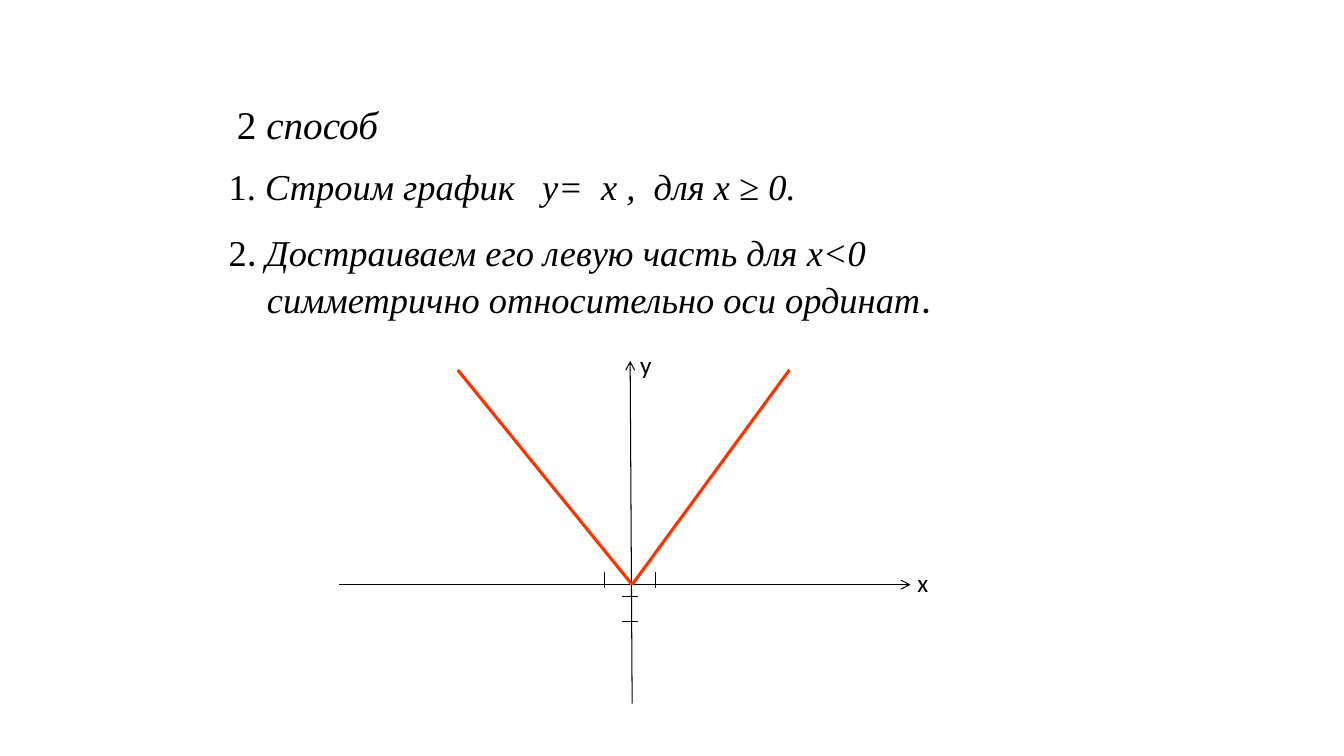
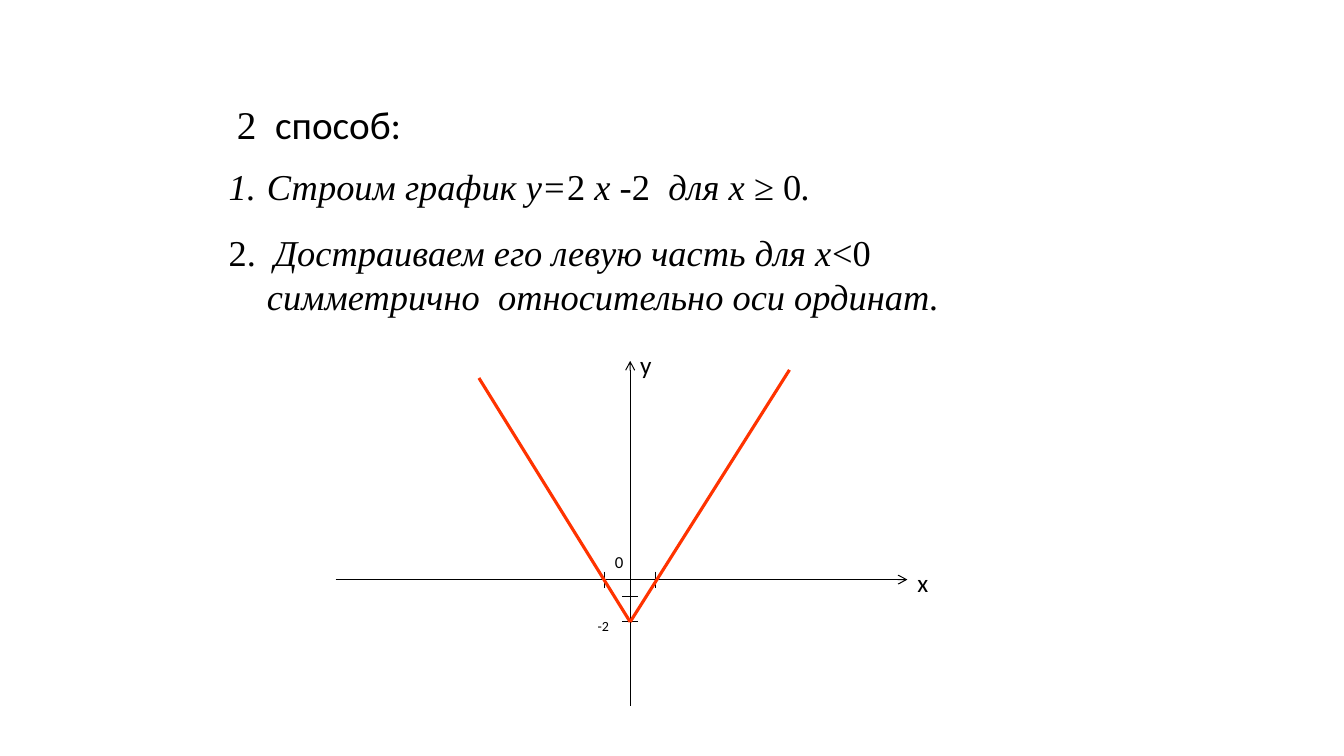
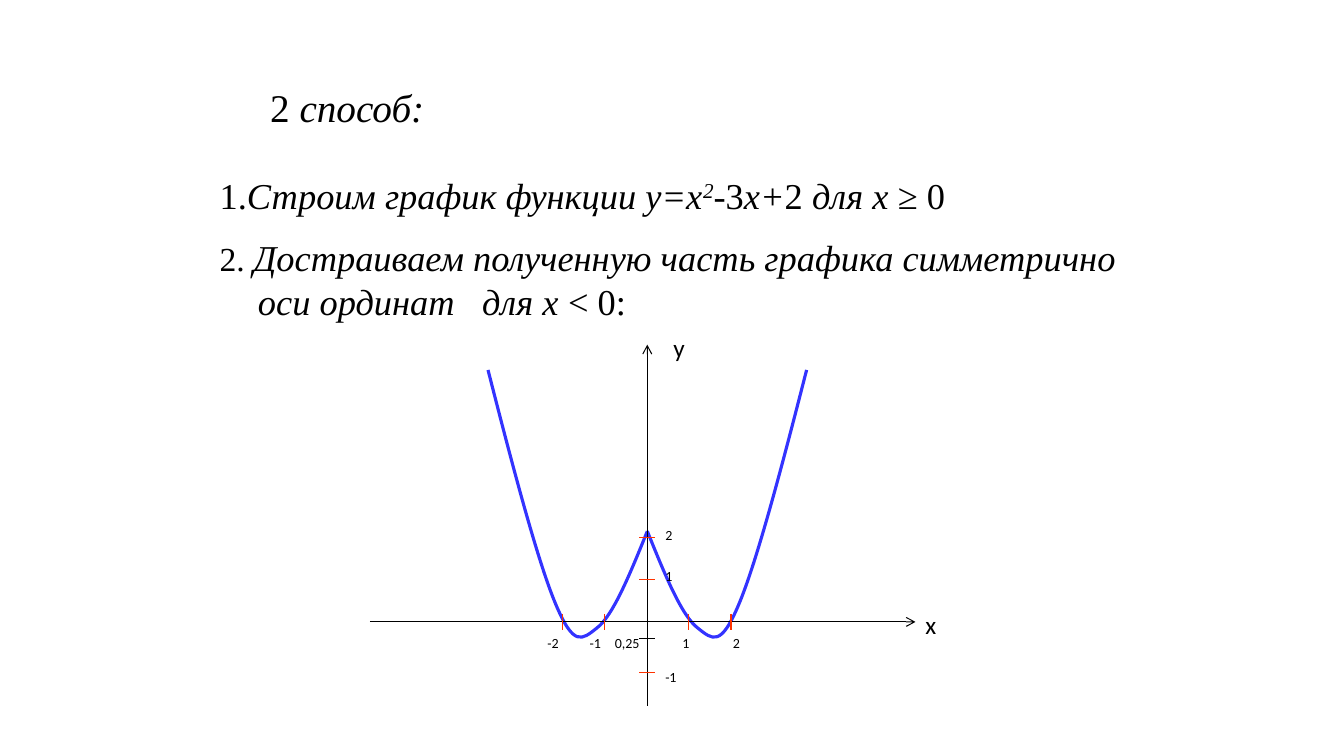
from lxml import etree
from pptx import Presentation
from pptx.dml.color import RGBColor
from pptx.enum.shapes import MSO_CONNECTOR
from pptx.enum.text import MSO_ANCHOR, MSO_AUTO_SIZE, PP_ALIGN
from pptx.oxml.ns import qn
from pptx.util import Inches, Pt

STRAIGHT = MSO_CONNECTOR.STRAIGHT
TOP = MSO_ANCHOR.TOP
LEFT = PP_ALIGN.LEFT
FIXED = MSO_AUTO_SIZE.NONE
GROW = MSO_AUTO_SIZE.SHAPE_TO_FIT_TEXT
TITLE_ONLY = 5

BLACK, RED, BLUE = "000000", "FF3300", "3333FF"
SERIF, SANS = "Times New Roman", "Calibri"
TITLE_SIZE, BODY_SIZE, AXIS_SIZE = 28, 26, 18
TITLE_BOX = (2.33, 0.58)
LABEL_HEIGHTS = {10: 0.27, 12: 0.3, AXIS_SIZE: 0.4}
HALF_TICK = 0.08
HANG = 0.38

PLAIN = {}
ITALIC = {"italic": True}
SUPER = {"italic": True, "raised": True}
SANS_TITLE = {"size": TITLE_SIZE, "font": SANS}
SMALLER = {"size": 24}

SLIDES = [
    {
        "title": [("2 ", PLAIN), ("способ", ITALIC)],
        "title_at": (2.25, 1),
        "body_box": (2.17, 1.58, 8.5, 1.74),
        "body": [
            [("1. ", PLAIN), ("Строим график   у=  х ,  для х ≥ 0.", ITALIC)],
            [("2", PLAIN), (". ", SANS_TITLE),
             ("Достраиваем его левую часть для х<0 симметрично относительно оси ординат", ITALIC),
             (".", SANS_TITLE)],
        ],
        "axes": [((6.27, 6.98), (6.25, 3.58)), ((3.36, 5.8), (9.03, 5.8))],
        "origin": (6.25, 5.75),
        "x_ticks": [(-0.25, BLACK), (0.25, BLACK)],
        "y_ticks": [(0.17, BLACK), (0.42, BLACK)],
        "vertex": (6.27, 5.8),
        "arm_ends": [(7.83, 3.67), (4.54, 3.67)],
        "labels": [("х", 9, 5.58, 0.33, AXIS_SIZE), ("у", 6.25, 3.42, 0.33, AXIS_SIZE)],
    },
    {
        "title": [("2 ", PLAIN), (" способ:", SANS_TITLE)],
        "title_at": (2.25, 1),
        "body_box": (2.17, 1.58, 8.5, 1.74),
        "numbered": 1,
        "body": [
            [("Строим график у=", ITALIC), ("2 ", PLAIN), ("х -", ITALIC), ("2 ", PLAIN),
             (" для х ", ITALIC), ("≥ 0", PLAIN), (".", ITALIC)],
            [("2. ", PLAIN), (" ", SANS_TITLE), ("Достраиваем его левую часть для х", ITALIC),
             ("<0", PLAIN), (" симметрично  относительно оси ординат.", ITALIC)],
        ],
        "axes": [((6.25, 7), (6.25, 3.58)), ((3.33, 5.75), (9, 5.75))],
        "origin": (6.25, 5.75),
        "x_ticks": [(-0.25, BLACK), (0.25, BLACK)],
        "y_ticks": [(0.17, BLACK), (0.42, BLACK)],
        "vertex": (6.25, 6.17),
        "arm_ends": [(7.83, 3.67), (4.75, 3.75)],
        "labels": [("-2", 5.83, 6.08, 0.42, 10), ("х", 9, 5.58, 0.33, AXIS_SIZE),
                   ("у", 6.25, 3.42, 0.33, AXIS_SIZE), ("0", 6, 5.42, 0.25, 12)],
    },
    {
        "title": [("2 ", PLAIN), ("способ:", ITALIC)],
        "title_at": (2.58, 0.83),
        "body_box": (2.08, 1.67, 9.25, 1.63),
        "body": [
            [("1.", PLAIN), ("Строим график функции у=х", ITALIC), ("2", SUPER), ("-", ITALIC),
             ("3", PLAIN), ("х+", ITALIC), ("2", PLAIN), (" для х ", ITALIC), ("≥ 0", PLAIN)],
            [("2. ", SMALLER),
             ("Достраиваем полученную часть графика симметрично оси ординат   для х ", ITALIC),
             ("< 0:", PLAIN)],
        ],
        "axes": [((6.42, 7), (6.42, 3.42)), ((3.67, 6.17), (9.08, 6.17))],
        "origin": (6.42, 6.17),
        "x_ticks": [(offset, RED) for offset in (-0.84, -0.42, 0.41, 0.83)],
        "y_ticks": [(0.16, BLACK), (0.5, RED), (-0.84, RED), (-0.42, RED)],
        "vertex": (6.42, 5.27),
        "curve": [
            [(0.17, 0.42), (0.34, 0.84), (0.5, 0.96)],
            [(0.65, 1.08), (0.73, 1.15), (0.91, 0.72)],
            [(1.09, 0.29), (1.34, -0.66), (1.58, -1.6)],
        ],
        "labels": [
            ("0,25", 6, 6.25, 0.58, 10), ("-2", 5.33, 6.25, 0.33, 10),
            ("-1", 5.75, 6.25, 0.33, 10), ("-1", 6.5, 6.58, 0.33, 10),
            ("2", 7.17, 6.25, 0.33, 10), ("1", 6.67, 6.25, 0.33, 10),
            ("2", 6.5, 5.17, 0.33, 10), ("1", 6.5, 5.58, 0.33, 10),
            ("х", 9.08, 6, 0.42, AXIS_SIZE), ("у", 6.58, 3.25, 0.42, AXIS_SIZE),
        ],
    },
]


def color(value):
    return RGBColor.from_string(value)


def add_runs(paragraph, runs, size, font=SERIF):
    paragraph.alignment = LEFT
    for text, style in runs:
        run = paragraph.add_run()
        run.text = text
        run.font.size = Pt(style.get("size", size))
        run.font.name = style.get("font", font)
        run.font.italic = style.get("italic", False)
        run.font.color.rgb = color(BLACK)
        if style.get("raised"):
            run._r.get_or_add_rPr().set("baseline", "30000")


def add_text_box(slide, left, top, width, height):
    box = slide.shapes.add_textbox(Inches(left), Inches(top), Inches(width), Inches(height))
    box.text_frame.word_wrap = True
    box.text_frame.auto_size = GROW
    return box.text_frame


def add_title(slide, runs, position):
    title = slide.shapes.title
    title.left, title.top = map(Inches, position)
    title.width, title.height = map(Inches, TITLE_BOX)
    frame = title.text_frame
    frame.auto_size = FIXED
    frame.vertical_anchor = TOP
    frame.word_wrap = True
    frame.paragraphs[0].line_spacing = 0.9
    add_runs(frame.paragraphs[0], runs, TITLE_SIZE)


def add_body(slide, steps, box, numbered):
    frame = add_text_box(slide, *box)
    for index, runs in enumerate(steps):
        paragraph = frame.add_paragraph() if index else frame.paragraphs[0]
        properties = paragraph._p.get_or_add_pPr()
        properties.set("marL", str(Inches(HANG)))
        properties.set("indent", str(-Inches(HANG)))
        space = etree.SubElement(properties, qn("a:spcBef"))
        etree.SubElement(space, qn("a:spcPct"), val="50000")
        if index < numbered:
            etree.SubElement(properties, qn("a:buFont"), typeface="+mj-lt")
            etree.SubElement(properties, qn("a:buAutoNum"), type="arabicPeriod")
        add_runs(paragraph, runs, BODY_SIZE)


def add_line(slide, start, end, line_color=BLACK, width=0.75, arrow=False):
    line = slide.shapes.add_connector(STRAIGHT, *map(Inches, (*start, *end)))
    line.line.color.rgb = color(line_color)
    line.line.width = Pt(width)
    if arrow:
        etree.SubElement(line.line._get_or_add_ln(), qn("a:tailEnd"), type="arrow")
    etree.SubElement(line._element.spPr, qn("a:effectLst"))


def add_ticks(slide, content):
    x, y = content["origin"]
    for offset, tick_color in content["x_ticks"]:
        add_line(slide, (x + offset, y - HALF_TICK), (x + offset, y + HALF_TICK), tick_color)
    for offset, tick_color in content["y_ticks"]:
        add_line(slide, (x - HALF_TICK, y + offset), (x + HALF_TICK, y + offset), tick_color)


def bend_segments(shape):
    corners = list(shape._element.iter(qn("a:lnTo")))
    for first in range(0, len(corners), 3):
        bend = etree.Element(qn("a:cubicBezTo"))
        corners[first].addprevious(bend)
        for corner in corners[first:first + 3]:
            bend.append(corner[0])
            corner.getparent().remove(corner)


def add_curve(slide, vertex, segments, side):
    x, y = vertex
    builder = slide.shapes.build_freeform(Inches(x), Inches(y))
    points = [(Inches(x + side * dx), Inches(y + dy))
              for segment in segments for dx, dy in segment]
    builder.add_line_segments(points, close=False)
    curve = builder.convert_to_shape()
    bend_segments(curve)
    curve.shadow.inherit = False
    curve.fill.background()
    curve.line.color.rgb = color(BLUE)
    curve.line.width = Pt(2.25)


def build_slide(presentation, content):
    slide = presentation.slides.add_slide(presentation.slide_layouts[TITLE_ONLY])
    if "curve" in content:
        for side in (-1, 1):
            add_curve(slide, content["vertex"], content["curve"], side)
    add_title(slide, content["title"], content["title_at"])
    add_body(slide, content["body"], content["body_box"], content.get("numbered", 0))
    for start, end in content["axes"]:
        add_line(slide, start, end, arrow=True)
    add_ticks(slide, content)
    for end in content.get("arm_ends", []):
        add_line(slide, content["vertex"], end, RED, 2.25)
    for text, left, top, width, size in content["labels"]:
        frame = add_text_box(slide, left, top, width, LABEL_HEIGHTS[size])
        add_runs(frame.paragraphs[0], [(text, PLAIN)], size, SANS)


def main():
    presentation = Presentation()
    presentation.slide_width = Inches(13.33)
    presentation.slide_height = Inches(7.5)
    for content in SLIDES:
        build_slide(presentation, content)
    presentation.save("out.pptx")


if __name__ == "__main__":
    main()
